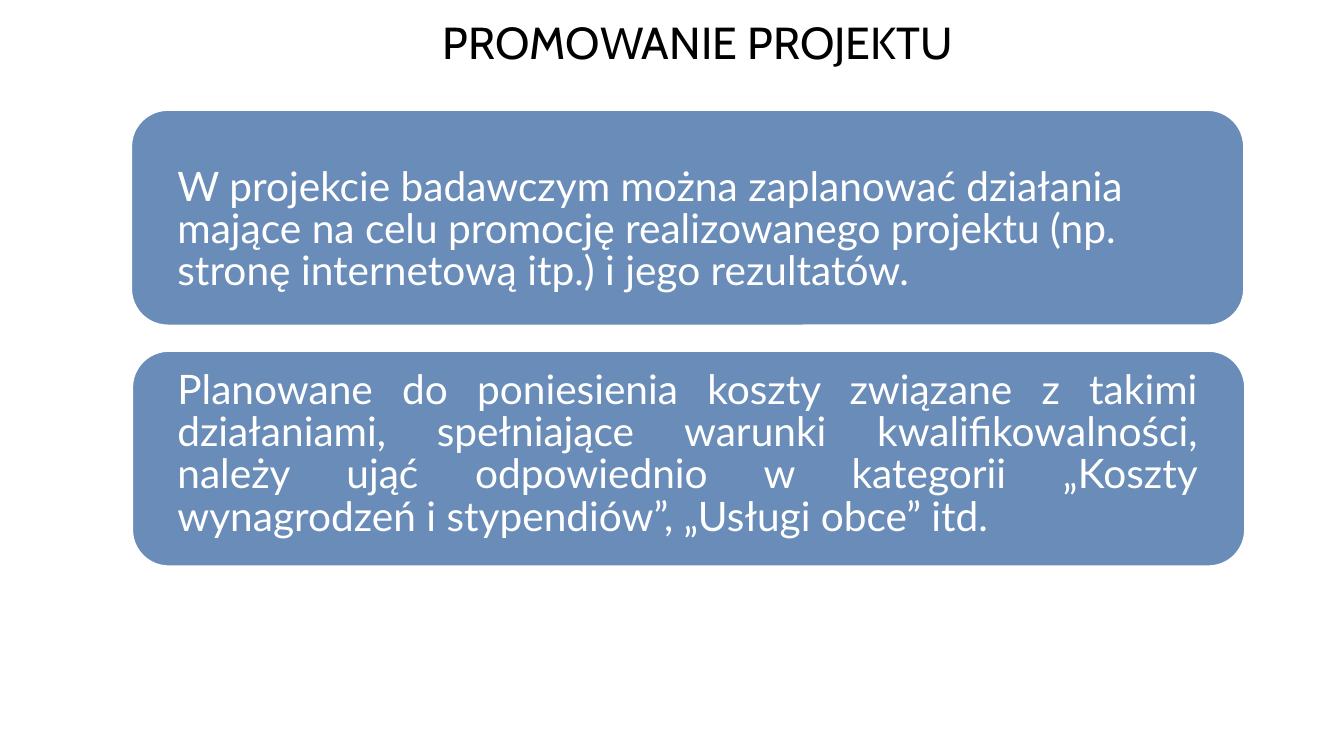
from dataclasses import dataclass

from pptx import Presentation
from pptx.dml.color import RGBColor
from pptx.enum.shapes import MSO_SHAPE as Shape
from pptx.enum.text import PP_ALIGN as Align
from pptx.slide import Slide
from pptx.util import Inches, Pt


@dataclass(frozen=True)
class Theme:
    card: RGBColor = RGBColor(0x69, 0x8C, 0xB8)
    light: RGBColor = RGBColor(0xFF, 0xFF, 0xFF)
    dark: RGBColor = RGBColor(0x00, 0x00, 0x00)
    title_font: str = "Cabin"
    body_font: str = "Lato"
    title_size: Pt = Pt(32)
    body_size: Pt = Pt(29)
    outline: Pt = Pt(1.5)


@dataclass(frozen=True)
class Box:
    left: float
    top: float
    width: float
    height: float

    def inches(self) -> tuple[Inches, ...]:
        return tuple(map(Inches, (self.left, self.top, self.width, self.height)))


@dataclass(frozen=True)
class TextStyle:
    font: str
    size: Pt
    color: RGBColor


@dataclass(frozen=True)
class Passage:
    text: str
    align: Align
    line_spacing: Pt | float = 1.0
    space_before: Pt = Pt(0)


THEME = Theme()
TITLE_STYLE = TextStyle(THEME.title_font, THEME.title_size, THEME.dark)
BODY_STYLE = TextStyle(THEME.body_font, THEME.body_size, THEME.light)
CORNER_RATIO = 0.17

CARDS = [Box(1.3, 1.09, 11.04, 2.14), Box(1.31, 3.48, 11.04, 2.14)]
TITLE = [Passage("PROMOWANIE PROJEKTU", Align.CENTER)]
BODY = [
    Passage(
        "W projekcie badawczym można zaplanować działania mające na celu "
        "promocję realizowanego projektu (np. stronę internetową itp.) "
        "i jego rezultatów.",
        Align.LEFT,
        line_spacing=Pt(30),
    ),
    Passage(
        "Planowane do poniesienia koszty związane z takimi\v"
        "działaniami, spełniające warunki kwalifikowalności,\v"
        "należy ująć odpowiednio w kategorii „Koszty\v"
        "wynagrodzeń i stypendiów”, „Usługi obce” itd.",
        Align.JUSTIFY,
        line_spacing=0.87,
        space_before=Pt(55),
    ),
]


def add_card(slide: Slide, box: Box) -> None:
    card = slide.shapes.add_shape(Shape.ROUNDED_RECTANGLE, *box.inches())
    card.adjustments[0] = CORNER_RATIO
    card.shadow.inherit = False
    card.fill.solid()
    card.fill.fore_color.rgb = THEME.card
    card.line.color.rgb = THEME.light
    card.line.width = THEME.outline


def add_text(slide: Slide, box: Box, passages: list[Passage], style: TextStyle) -> None:
    frame = slide.shapes.add_textbox(*box.inches()).text_frame
    frame.word_wrap = True
    frame.margin_left = frame.margin_right = 0
    frame.margin_top = frame.margin_bottom = 0
    for index, passage in enumerate(passages):
        paragraph = frame.add_paragraph() if index else frame.paragraphs[0]
        paragraph.text = passage.text
        paragraph.alignment = passage.align
        paragraph.line_spacing = passage.line_spacing
        if index:
            paragraph.space_before = passage.space_before
        paragraph.font.name = style.font
        paragraph.font.size = style.size
        paragraph.font.color.rgb = style.color


def main() -> None:
    presentation = Presentation()
    presentation.slide_width = Inches(13.33)
    presentation.slide_height = Inches(7.5)
    slide = presentation.slides.add_slide(presentation.slide_layouts[6])
    add_text(slide, Box(3.76, 0.15, 6.33, 0.54), TITLE, TITLE_STYLE)
    for card in CARDS:
        add_card(slide, card)
    add_text(slide, Box(1.76, 1.66, 10.13, 3.71), BODY, BODY_STYLE)
    presentation.save("out.pptx")


if __name__ == "__main__":
    main()
